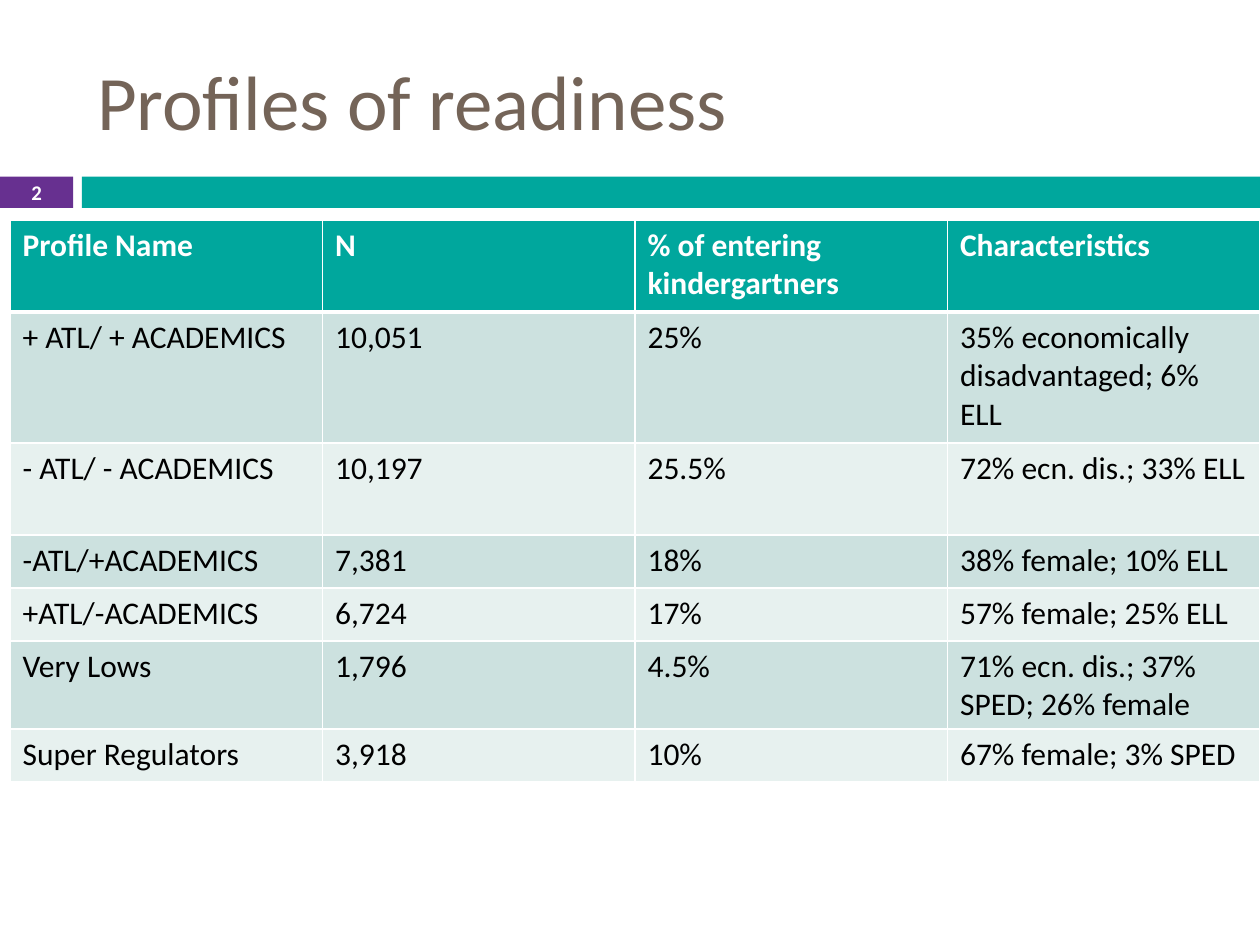
import pptx
import pptx.util
import pptx.dml.color
import pptx.enum.shapes
import pptx.enum.text
import pptx.oxml
import pptx.oxml.ns

TEAL, PURPLE, BROWN = "00A79D", "673090", "746458"
WHITE, BLACK = "FFFFFF", "000000"
BANDS = ("CCE1DF", "E7F1EF")
ALIGN = pptx.enum.text.PP_ALIGN
ANCHOR = pptx.enum.text.MSO_ANCHOR

PROFILES = [
    ("Profile Name", "N", "% of entering kindergartners", "Characteristics"),
    ("+ ATL/ + ACADEMICS", "10,051", "25%", "35% economically disadvantaged; 6% ELL"),
    ("- ATL/ - ACADEMICS", "10,197", "25.5%", "72% ecn. dis.; 33% ELL"),
    ("-ATL/+ACADEMICS", "7,381", "18%", "38% female; 10% ELL"),
    ("+ATL/-ACADEMICS", "6,724", "17%", "57% female; 25% ELL"),
    ("Very Lows", "1,796", "4.5%", "71% ecn. dis.; 37% SPED; 26% female"),
    ("Super Regulators", "3,918", "10%", "67% female; 3% SPED"),
]
ROW_HEIGHTS = (0.73, 1.04, 0.73, 0.42, 0.42, 0.42, 0.42)


def color(hex_code):
    return pptx.dml.color.RGBColor.from_string(hex_code)


def write(frame, text, size=18, ink=BLACK, bold=False, align=ALIGN.LEFT, font="Calibri"):
    frame.word_wrap = True
    paragraph = frame.paragraphs[0]
    paragraph.alignment = align
    run = paragraph.add_run()
    run.text = text
    run.font.name, run.font.size, run.font.bold = font, pptx.util.Pt(size), bold
    run.font.color.rgb = color(ink)


class Deck:
    """Holds the presentation, its grid and the current slide."""

    def __init__(self, width=10, height=7.5):
        self.prs = pptx.Presentation()
        self.prs.slide_width = pptx.util.Inches(width)
        self.prs.slide_height = pptx.util.Inches(height)
        self.slide = self.prs.slides.add_slide(self.prs.slide_layouts[5])

    def box(self, left, top, width, height):
        """Turn shares of the slide's size into lengths."""
        across, down = self.prs.slide_width, self.prs.slide_height
        return (round(left * across), round(top * down),
                round(width * across), round(height * down))

    def title(self, text, *area):
        heading = self.slide.shapes.title
        heading.left, heading.top, heading.width, heading.height = self.box(*area)
        heading.text_frame.vertical_anchor = ANCHOR.MIDDLE
        write(heading.text_frame, text, size=44, ink=BROWN)

    def bar(self, fill, *area):
        strip = self.slide.shapes.add_shape(
            pptx.enum.shapes.MSO_SHAPE.RECTANGLE, *self.box(*area))
        strip.shadow.inherit = False
        strip.fill.solid()
        strip.fill.fore_color.rgb = color(fill)
        strip.line.fill.background()

    def label(self, text, *area, **style):
        frame = self.slide.shapes.add_textbox(*self.box(*area)).text_frame
        frame.margin_top = frame.margin_bottom = 0
        frame.vertical_anchor = ANCHOR.MIDDLE
        write(frame, text, **style)

    def borders(self, cell, **widths):
        properties = cell._tc.get_or_add_tcPr()
        for side in "LRTB":
            properties.append(pptx.oxml.parse_xml(
                f'<a:ln{side} {pptx.oxml.ns.nsdecls("a")} '
                f'w="{pptx.util.Pt(widths.get(side, 1))}"><a:solidFill>'
                f'<a:srgbClr val="{WHITE}"/></a:solidFill></a:ln{side}>'))

    def table(self, rows, heights, *area):
        grid = self.slide.shapes.add_table(
            len(rows), len(rows[0]), *self.box(*area)).table
        for r, (values, height) in enumerate(zip(rows, heights)):
            grid.rows[r].height = pptx.util.Inches(height)
            header = r == 0
            for c, value in enumerate(values):
                cell = grid.cell(r, c)
                # A heavier rule parts the header from the body
                self.borders(cell, B=3 if header else 1, T=3 if r == 1 else 1)
                cell.fill.solid()
                cell.fill.fore_color.rgb = color(TEAL if header else BANDS[(r - 1) % 2])
                write(cell.text_frame, value, ink=WHITE if header else BLACK, bold=header)


def main():
    deck = Deck()
    # Band under the title, with the slide number at its left
    band_top, band_height = 0.187, 0.033
    deck.bar(PURPLE, 0, band_top, 0.058, band_height)
    deck.bar(TEAL, 0.065, band_top, 0.935, band_height)
    deck.title("Profiles of readiness", 0.067, 0.033, 0.892, 0.144)
    deck.label("2", 0, band_top, 0.058, band_height,
               size=11.9, ink=WHITE, bold=True, align=ALIGN.CENTER)
    # Readiness profiles
    deck.table(PROFILES, ROW_HEIGHTS, 0.008, 0.233, 0.992, 0.593)
    deck.prs.save("out.pptx")


if __name__ == "__main__":
    main()
